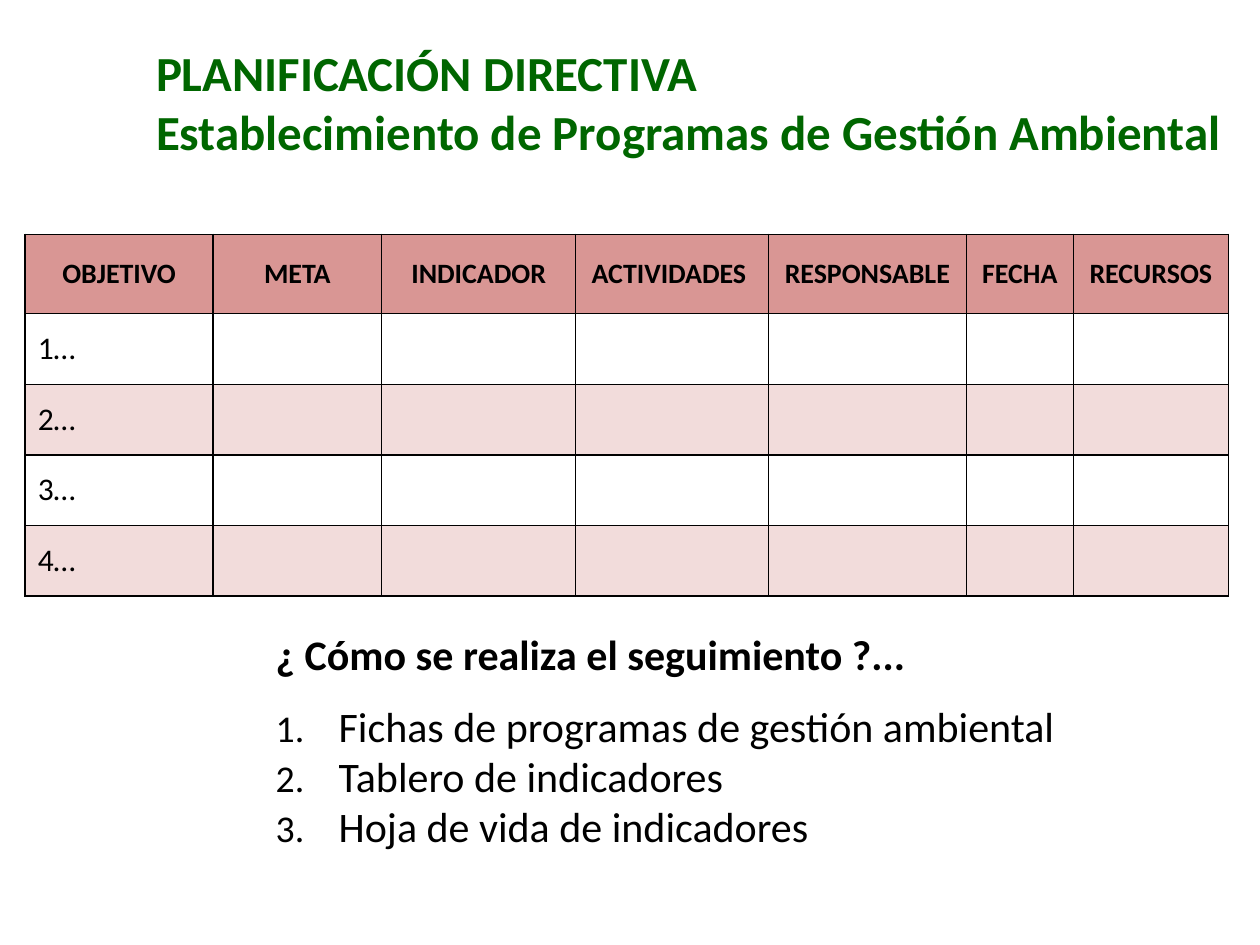
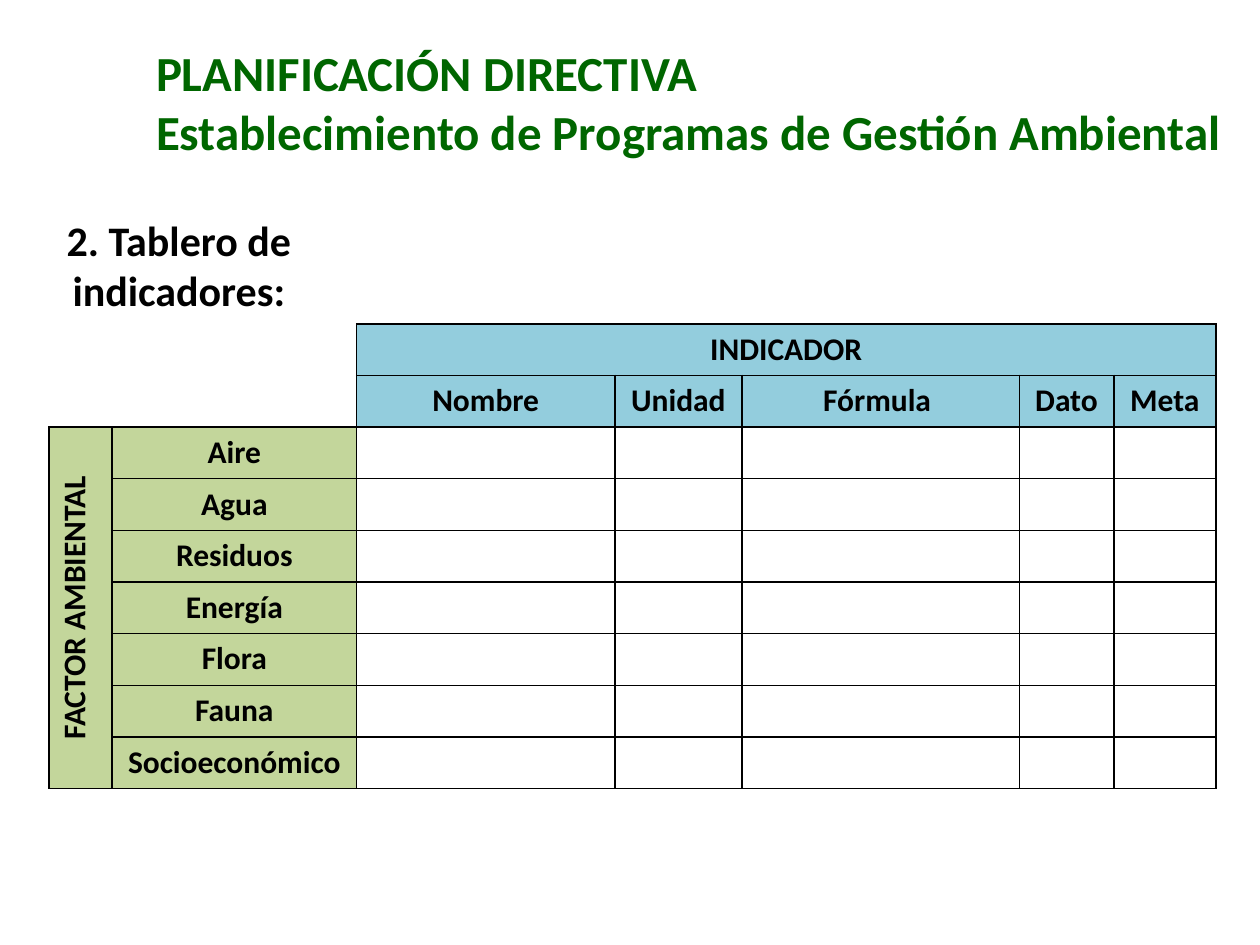
from lxml import etree
from pptx import Presentation
from pptx.dml.color import RGBColor
from pptx.enum.text import MSO_ANCHOR, MSO_AUTO_SIZE, PP_ALIGN
from pptx.oxml.ns import qn
from pptx.util import Inches, Pt

CENTER, JUSTIFY, LEFT = PP_ALIGN.CENTER, PP_ALIGN.JUSTIFY, PP_ALIGN.LEFT
MIDDLE, TOP = MSO_ANCHOR.MIDDLE, MSO_ANCHOR.TOP
FIT_SHAPE = MSO_AUTO_SIZE.SHAPE_TO_FIT_TEXT

BLACK = RGBColor(0x00, 0x00, 0x00)
GREEN = RGBColor(0x00, 0x66, 0x00)
ROSE = RGBColor(0xD9, 0x96, 0x94)
PALE_ROSE = RGBColor(0xF2, 0xDC, 0xDB)
SKY = RGBColor(0x93, 0xCD, 0xDD)
LIME = RGBColor(0xC3, 0xD6, 0x9B)

FONT = "Calibri"
PLAIN_TABLE_STYLE = "{2D5ABB26-0587-4C30-8999-92F81FD0307C}"


class Deck:
    """Builds slides that share one font, title and table style."""

    def __init__(self):
        self.presentation = Presentation()
        self.presentation.slide_width = Inches(10)
        self.presentation.slide_height = Inches(7.5)
        self.slide = None

    def new_slide(self):
        layout = self.presentation.slide_layouts[6]
        self.slide = self.presentation.slides.add_slide(layout)

    def add_words(self, paragraph, words, size, bold=True, color=BLACK, align=LEFT):
        paragraph.alignment = align
        run = paragraph.add_run()
        run.text = words
        run.font.name = FONT
        run.font.size = Pt(size)
        run.font.bold = bold
        run.font.color.rgb = color

    def text_box(self, left, top, width, height):
        box = self.slide.shapes.add_textbox(
            Inches(left), Inches(top), Inches(width), Inches(height))
        frame = box.text_frame
        frame.word_wrap = True
        frame.auto_size = FIT_SHAPE
        return frame

    def title(self):
        frame = self.text_box(1.14, 0.29, 8.86, 1.04)
        self.add_words(frame.paragraphs[0], "PLANIFICACIÓN DIRECTIVA", 28, color=GREEN)
        self.add_words(frame.add_paragraph(),
                       "Establecimiento de Programas de Gestión Ambiental",
                       28, color=GREEN, align=JUSTIFY)

    def numbered(self, frame, items, size):
        for index, item in enumerate(items):
            paragraph = frame.add_paragraph()
            self.add_words(paragraph, item, size, bold=False, align=JUSTIFY)
            if index == 0:
                paragraph.space_before = Pt(12)
            properties = paragraph._p.get_or_add_pPr()
            properties.set("marL", str(Inches(0.5)))
            properties.set("indent", str(-Inches(0.5)))
            etree.SubElement(properties, qn("a:buSzPct"), val="90000")
            etree.SubElement(properties, qn("a:buFont"), typeface=FONT)
            etree.SubElement(properties, qn("a:buAutoNum"), type="arabicPeriod")

    def table(self, left, top, widths, heights):
        grid = self.slide.shapes.add_table(
            len(heights), len(widths), Inches(left), Inches(top),
            Inches(sum(widths)), Inches(sum(heights))).table
        grid.first_row = grid.horz_banding = False
        grid._tbl.tblPr.find(qn("a:tableStyleId")).text = PLAIN_TABLE_STYLE
        for column, width in zip(grid.columns, widths):
            column.width = Inches(width)
        for row, height in zip(grid.rows, heights):
            row.height = Inches(height)
        return grid

    def cell(self, cell, words="", size=18, bold=True, fill=None,
             align=CENTER, anchor=TOP, sides="LRTB"):
        properties = cell._tc.get_or_add_tcPr()
        for side in sides:
            line = etree.SubElement(properties, qn(f"a:ln{side}"), w=str(Pt(1)))
            solid = etree.SubElement(line, qn("a:solidFill"))
            etree.SubElement(solid, qn("a:srgbClr"), val=str(BLACK))
        if fill is None:
            cell.fill.background()
        else:
            cell.fill.solid()
            cell.fill.fore_color.rgb = fill
        cell.vertical_anchor = anchor
        if words:
            self.add_words(cell.text_frame.paragraphs[0], words, size, bold, align=align)

    def save(self):
        self.presentation.save("out.pptx")


def programme_slide(deck):
    deck.new_slide()
    headings = ["OBJETIVO", "META", "INDICADOR", "ACTIVIDADES ",
                "RESPONSABLE", "FECHA", "RECURSOS"]
    objectives = ["1…", "2…", "3…", "4…"]
    programme = deck.table(0.2, 1.86, [1.49, 1.34, 1.54, 1.53, 1.57, 0.85, 1.23],
                           [0.63] + [0.56] * len(objectives))
    for column, heading in enumerate(headings):
        deck.cell(programme.cell(0, column), heading, 16, fill=ROSE, anchor=MIDDLE)
        for row, objective in enumerate(objectives, 1):
            deck.cell(programme.cell(row, column), "" if column else objective,
                      bold=False, fill=None if row % 2 else PALE_ROSE,
                      align=LEFT, anchor=MIDDLE)

    follow_up = deck.text_box(2.09, 4.94, 6.46, 1.88)
    deck.add_words(follow_up.paragraphs[0], "¿ Cómo se realiza el seguimiento ?...",
                   24, align=JUSTIFY)
    deck.numbered(follow_up, ["Fichas de programas de gestión ambiental",
                              "Tablero de indicadores",
                              "Hoja de vida de indicadores"], 24)
    deck.title()


def dashboard_slide(deck):
    deck.new_slide()
    headings = ["Nombre", "Unidad", "Fórmula ", "Dato", "Meta"]
    factors = ["Aire", "Agua", "Residuos", "Energía", "Flora", "Fauna",
               "Socioeconómico"]
    dashboard = deck.table(0.39, 2.57, [0.5, 1.94, 2.05, 1.01, 2.2, 0.75, 0.81],
                           [0.41] * (len(factors) + 2))
    last_row, last_column = len(factors) + 1, len(headings) + 1

    corner = dashboard.cell(0, 0)
    corner.merge(dashboard.cell(1, 1))
    deck.cell(corner, sides="RB")
    dashboard.cell(0, 2).merge(dashboard.cell(0, last_column))
    dashboard.cell(2, 0).merge(dashboard.cell(last_row, 0))

    for column, heading in enumerate(headings, 2):
        deck.cell(dashboard.cell(0, column), "INDICADOR" if column == 2 else "",
                  fill=SKY, anchor=MIDDLE)
        deck.cell(dashboard.cell(1, column), heading, fill=SKY)
    for row, factor in enumerate(factors, 2):
        side = dashboard.cell(row, 0)
        deck.cell(side, "FACTOR AMBIENTAL" if row == 2 else "",
                  fill=LIME, anchor=MIDDLE)
        side._tc.get_or_add_tcPr().set("vert", "vert270")
        deck.cell(dashboard.cell(row, 1), factor, fill=LIME)
        for column in range(2, last_column + 1):
            deck.cell(dashboard.cell(row, column))

    subtitle = deck.text_box(0.28, 1.65, 2.28, 1.08)
    deck.add_words(subtitle.paragraphs[0], "2. Tablero de indicadores:", 24, align=CENTER)
    deck.title()


def main():
    deck = Deck()
    programme_slide(deck)
    dashboard_slide(deck)
    deck.save()


if __name__ == "__main__":
    main()
